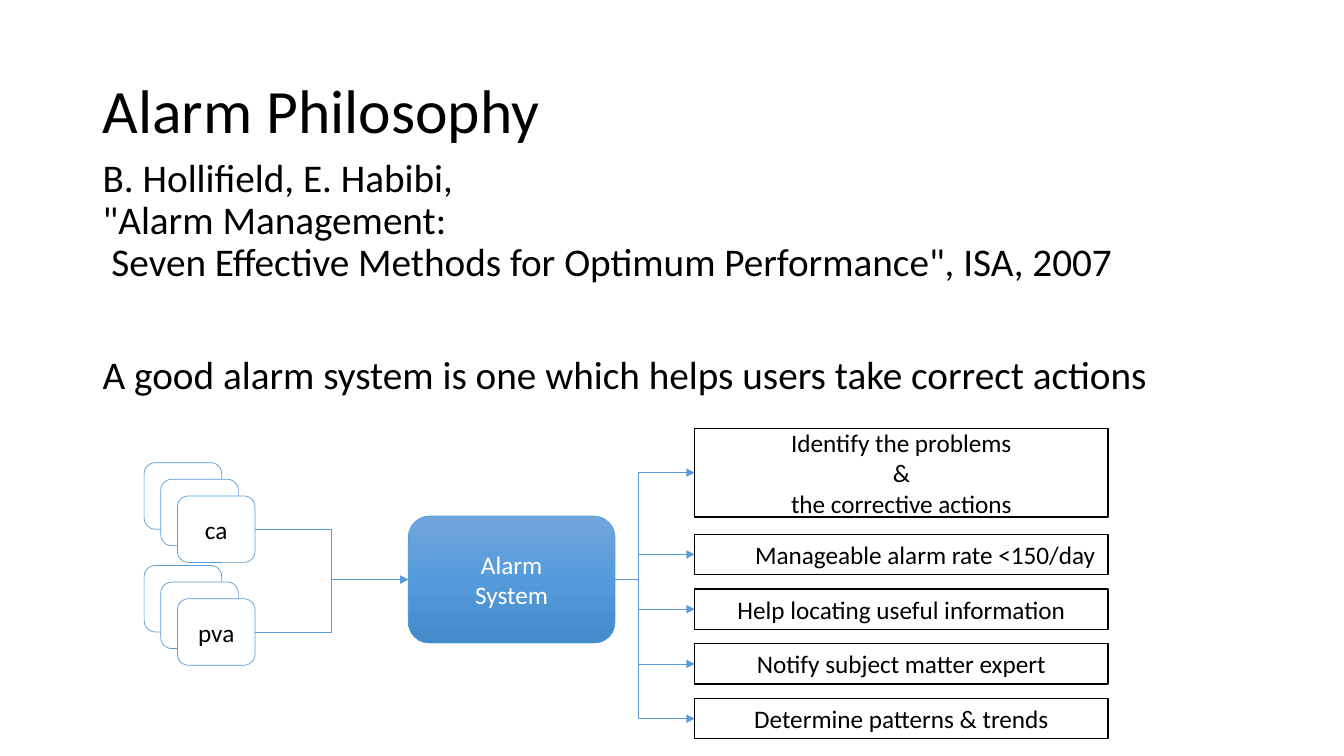
import copy

import lxml.etree
import pptx
import pptx.dml.color
import pptx.enum.shapes
import pptx.enum.text
import pptx.oxml.ns
import pptx.util

Inches = pptx.util.Inches
Shapes = pptx.enum.shapes.MSO_SHAPE
Align = pptx.enum.text.PP_ALIGN
Anchor = pptx.enum.text.MSO_ANCHOR
qn = pptx.oxml.ns.qn

FONT = "Calibri"
BLACK, WHITE, BLUE = "000000", "FFFFFF", "5B9BD5"
SYSTEM_GRADIENT = [(0, "71A6DB"), (0.5, "559BDB"), (1, "448ACA")]


def color(hex_string):
    """Return the colour for a hex string."""
    return pptx.dml.color.RGBColor.from_string(hex_string)


def write_text(shape, lines, size=18, ink=BLACK, align=Align.CENTER, anchor=Anchor.MIDDLE,
               line_spacing=None, gap=0, indent=0):
    """Fill a shape with one paragraph for each line."""
    frame = shape.text_frame
    frame.word_wrap = True
    frame.vertical_anchor = anchor
    for number, line in enumerate(lines):
        paragraph = frame.add_paragraph() if number else frame.paragraphs[0]
        paragraph.text = line
        paragraph.alignment = align
        if indent:
            paragraph._p.get_or_add_pPr().set("marL", str(Inches(indent)))
        if line_spacing:
            paragraph.line_spacing = line_spacing
        if number and gap:
            paragraph.space_before = pptx.util.Pt(gap)
        paragraph.font.name = FONT
        paragraph.font.size = pptx.util.Pt(size)
        paragraph.font.color.rgb = color(ink)


def add_text(slide, box, lines, **text_format):
    """Add a left-aligned text box."""
    shape = slide.shapes.add_textbox(*map(Inches, box))
    write_text(shape, lines, align=Align.LEFT, line_spacing=0.9, **text_format)


def add_box(slide, kind, box, lines=(), line=BLUE, width=0.5, **text_format):
    """Add a white outlined shape with text."""
    shape = slide.shapes.add_shape(kind, *map(Inches, box))
    shape.shadow.inherit = False
    shape.fill.solid()
    shape.fill.fore_color.rgb = color(WHITE)
    shape.line.color.rgb = color(line)
    shape.line.width = pptx.util.Pt(width)
    write_text(shape, lines, **text_format)
    return shape


def add_arrow(slide, start, end):
    """Add an elbow connector with an arrowhead at its end."""
    connector = slide.shapes.add_connector(
        pptx.enum.shapes.MSO_CONNECTOR.ELBOW, *map(Inches, start + end))
    connector.line.color.rgb = color(BLUE)
    connector.line.width = pptx.util.Pt(0.5)
    lxml.etree.SubElement(connector.line._get_or_add_ln(), qn("a:tailEnd"), type="triangle")
    lxml.etree.SubElement(connector._element.spPr, qn("a:effectLst"))


def add_source_stack(slide, left, top, label, target):
    """Add three stacked cards, the front one labelled, and an arrow to the target."""
    width, height, step = 0.77, 0.66, 0.165
    for number in range(3):
        offset = number * step
        lines = [label] if number == 2 else []
        add_box(slide, Shapes.ROUNDED_RECTANGLE, (left + offset, top + offset, width, height), lines)
    add_arrow(slide, (left + offset + width, top + offset + height / 2), target)


def add_outcome(slide, box, lines, origin, **text_format):
    """Add an outcome box and the arrow that leads to it."""
    left, top, width, height = box
    add_box(slide, Shapes.RECTANGLE, box, lines, line=BLACK, width=1, **text_format)
    add_arrow(slide, origin, (left, top + height / 2))


def add_alarm_system(slide, box):
    """Add the central box with its vertical gradient."""
    shape = add_box(slide, Shapes.ROUNDED_RECTANGLE, box, ["Alarm", "System"], ink=WHITE)
    shape.fill.gradient()
    shape.fill.gradient_angle = 270
    stop_list = next(shape._element.iter(qn("a:gsLst")))
    stop_list.append(copy.deepcopy(stop_list[0]))
    for stop, (position, hex_string) in zip(shape.fill.gradient_stops, SYSTEM_GRADIENT):
        stop.position = position
        stop.color.rgb = color(hex_string)


def add_diagram(slide, left, top):
    """Add the flow from sources through the alarm system to outcomes."""
    system_left, system_top, system_width, system_height = left + 2.62, top + 0.87, 2.05, 1.26
    middle = system_top + system_height / 2
    for number, label in enumerate(["ca", "pva"]):
        add_source_stack(slide, left, top + 0.34 + number * 1.02, label, (system_left, middle))

    outcome_left, outcome_width = left + 5.46, 4.1
    origin = (left + 4.34, middle)
    add_outcome(slide, (outcome_left, top, outcome_width, 0.88),
                ["Identify the problems", "&", "the corrective actions"], origin)
    outcomes = [
        ("Manageable alarm rate <150/day", {"align": Align.LEFT, "indent": 0.5}),
        ("Help locating useful information", {}),
        ("Notify subject matter expert", {}),
        ("Determine patterns & trends", {}),
    ]
    for number, (label, text_format) in enumerate(outcomes):
        box = (outcome_left, top + 1.05 + number * 1.63 / 3, outcome_width, 0.4)
        add_outcome(slide, box, [label], origin, **text_format)
    add_alarm_system(slide, (system_left, system_top, system_width, system_height))


def main():
    """Build the slide and save it."""
    presentation = pptx.Presentation()
    presentation.slide_width = Inches(13.33)
    presentation.slide_height = Inches(7.5)
    slide = presentation.slides.add_slide(presentation.slide_layouts[6])
    add_text(slide, (0.92, 0.4, 11.5, 1.45), ["Alarm Philosophy"], size=44)
    add_text(slide, (0.92, 1.52, 11.5, 2.49), [
        'B. Hollifield, E. Habibi,\v"Alarm Management:\v'
        ' Seven Effective Methods for Optimum Performance", ISA, 2007',
        "A good alarm system is one which helps users take correct actions",
    ], size=28, anchor=Anchor.TOP, gap=50)
    add_diagram(slide, 1.43, 4.25)
    presentation.save("out.pptx")


if __name__ == "__main__":
    main()
